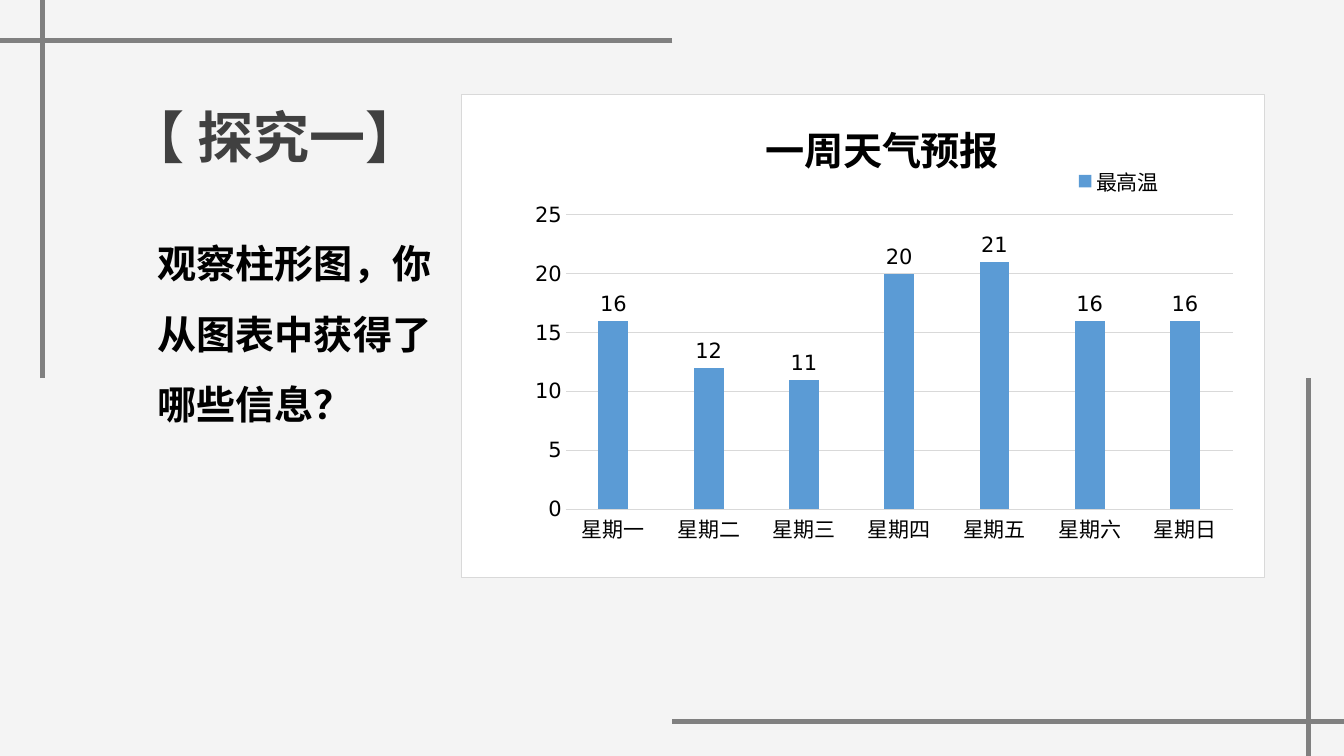
from lxml import etree
from pptx import Presentation
from pptx.chart.data import CategoryChartData
from pptx.dml.color import RGBColor
from pptx.enum import chart as ch, shapes, text
from pptx.oxml import parse_xml
from pptx.oxml.ns import nsdecls, qn
from pptx.util import Inches, Pt

COLORS = {
    "back": "F2F2F2", "frame": "808080", "title": "404040", "ink": "000000",
    "grid": "D9D9D9", "bar": "5B9BD5", "panel": "FFFFFF",
}
LATIN, CJK = "DejaVu Sans", "Noto Sans CJK SC"


def rgb(name):
    return RGBColor.from_string(COLORS[name])


class Deck:
    """Holds the presentation, the current slide and its style."""

    def __init__(self, width, height):
        self.prs = Presentation()
        self.prs.slide_width, self.prs.slide_height = Inches(width), Inches(height)
        self.s = self.prs.slides.add_slide(self.prs.slide_layouts[1])

    def backdrop(self, color, alpha):
        sp = self.s.shapes.add_shape(shapes.MSO_SHAPE.RECTANGLE, 0, 0,
                                     self.prs.slide_width, self.prs.slide_height)
        sp.shadow.inherit = False
        sp.line.fill.background()
        sp.fill.solid()
        sp.fill.fore_color.rgb = rgb(color)
        clr = sp.fill._xPr.find(".//" + qn("a:srgbClr"))
        etree.SubElement(clr, qn("a:alpha"), val=str(alpha * 1000))

    def line(self, x1, y1, x2, y2):
        c = self.s.shapes.add_connector(shapes.MSO_CONNECTOR.STRAIGHT,
                                        *(Inches(v) for v in (x1, y1, x2, y2)))
        c.line.color.rgb = rgb("frame")
        c.line.width = Pt(3.25)
        etree.SubElement(c._element.spPr, qn("a:effectLst"))

    def placeholder(self, idx, box, words, size, font, color, align, spacing=1.0):
        sp = self.s.placeholders[idx]
        sp.left, sp.top, sp.width, sp.height = (Inches(v) for v in box)
        self.s.shapes._spTree.append(sp._element)  # bring above the backdrop
        tf = sp.text_frame
        tf.text = words
        tf.word_wrap = True
        tf.auto_size = text.MSO_AUTO_SIZE.SHAPE_TO_FIT_TEXT
        tf.vertical_anchor = text.MSO_ANCHOR.TOP
        p = tf.paragraphs[0]
        p.alignment, p.line_spacing, p.space_before = align, spacing, Pt(0)
        pPr = p._p.get_or_add_pPr()
        pPr.set("marL", "0")
        pPr.set("indent", "0")
        etree.SubElement(pPr, qn("a:buNone"))
        f = p.runs[0].font
        f.size, f.bold, f.name = Pt(size), True, font
        f.color.rgb = rgb(color)
        etree.SubElement(f._element, qn("a:ea"), typeface=CJK)

    def place(self, parent, index, inner=False, **edges):
        """Give a chart part a manual layout, in fractions of the chart."""
        for old in parent.findall(qn("c:layout")):
            parent.remove(old)
        layout = parse_xml(f"<c:layout {nsdecls('c')}><c:manualLayout/></c:layout>")
        manual = layout[0]
        if inner:
            etree.SubElement(manual, qn("c:layoutTarget"), val="inner")
        for axis in "xy":
            etree.SubElement(manual, qn(f"c:{axis}Mode"), val="edge")
        for key, value in edges.items():
            etree.SubElement(manual, qn(f"c:{key}"), val=str(value))
        parent.insert(index, layout)

    def column_chart(self, box, title, series, values):
        data = CategoryChartData()
        data.categories = list(values)
        data.add_series(series, values.values())
        chart = self.s.shapes.add_chart(ch.XL_CHART_TYPE.COLUMN_CLUSTERED,
                                        *(Inches(v) for v in box), data).chart
        chart.font.size, chart.font.name = Pt(15), LATIN
        chart.font.color.rgb = rgb("ink")

        # Panel
        chart._chartSpace.find(qn("c:chart")).addnext(parse_xml(
            f"<c:spPr {nsdecls('c', 'a')}>"
            f"<a:solidFill><a:srgbClr val='{COLORS['panel']}'/></a:solidFill>"
            f"<a:ln w='9525'><a:solidFill><a:srgbClr val='{COLORS['grid']}'/>"
            "</a:solidFill></a:ln></c:spPr>"))

        # Title and legend
        tf = chart.chart_title.text_frame
        tf.text = title
        f = tf.paragraphs[0].runs[0].font
        f.size, f.bold, f.name = Pt(28), True, LATIN
        f.color.rgb = rgb("ink")
        self.place(chart.chart_title._element, 1, x=0.37, y=0.03)
        chart.has_legend = True
        chart.legend.position = ch.XL_LEGEND_POSITION.RIGHT
        chart.legend.include_in_layout = False
        self.place(chart.legend._element, 1, x=0.76, y=0.14)

        # Columns
        plot = chart.plots[0]
        plot.gap_width, plot.overlap, plot.vary_by_categories = 219, -27, False
        fill = plot.series[0].format.fill
        fill.solid()
        fill.fore_color.rgb = rgb("bar")
        plot.has_data_labels = True
        plot.data_labels.show_value = True
        plot.data_labels.position = ch.XL_LABEL_POSITION.OUTSIDE_END
        self.place(chart._chartSpace.find(".//" + qn("c:plotArea")), 0, inner=True,
                   x=0.13, y=0.25, w=0.83, h=0.61)

        # Axes
        cat, val = chart.category_axis, chart.value_axis
        for axis in (cat, val):
            axis.major_tick_mark = axis.minor_tick_mark = ch.XL_TICK_MARK.NONE
        val.minimum_scale, val.maximum_scale, val.major_unit = 0, 25, 5
        val.format.line.fill.background()
        for ln in (cat.format.line, val.major_gridlines.format.line):
            ln.color.rgb = rgb("grid")
            ln.width = Pt(0.75)


def main():
    deck = Deck(13.33, 7.5)

    # Backdrop and corner lines
    deck.backdrop("back", 79)
    for ends in ((0.42, 3.75, 0.42, 0), (6.67, 0.4, 0, 0.4),
                 (12.98, 3.75, 12.98, 7.5), (6.67, 7.16, 13.33, 7.16)):
        deck.line(*ends)

    # Heading, chart and question
    deck.placeholder(0, (1.09, 0.97, 3.27, 0.77), "【 探究一】", 40, LATIN,
                     "title", text.PP_ALIGN.CENTER)
    days = ["星期" + day for day in "一二三四五六日"]
    highs = (16, 12, 11, 20, 21, 16, 16)
    deck.column_chart((4.57, 0.93, 7.98, 4.8), "一周天气预报", "最高温",
                      dict(zip(days, highs)))
    deck.placeholder(1, (1.46, 2.09, 2.93, 2.11), "观察柱形图，你从图表中获得了哪些信息？",
                     28, CJK, "ink", text.PP_ALIGN.LEFT, 1.5)

    deck.prs.save("out.pptx")


if __name__ == "__main__":
    main()
